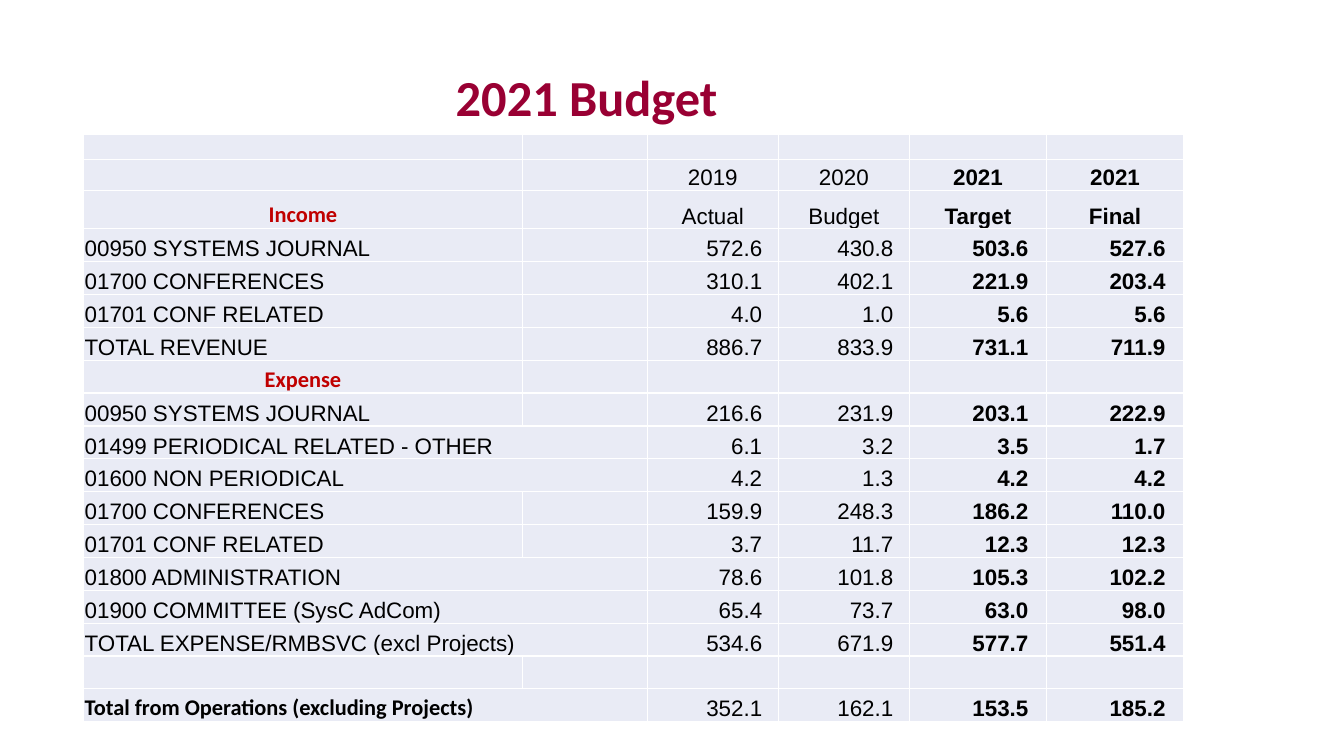
from pptx import Presentation
from pptx.dml.color import RGBColor as RGB
from pptx.enum.text import MSO_ANCHOR as Anchor, PP_ALIGN as Align
from pptx.util import Inches, Pt

MAROON = RGB(0x99, 0x00, 0x33)
RED = RGB(0xC0, 0x00, 0x00)
BLACK = RGB(0x00, 0x00, 0x00)
PALE = RGB(0xE9, 0xEB, 0xF5)

# Budget lines: label, blank column, then one figure per year
ROWS = [
    [""] * 6,
    ["", "", "2019", "2020", "2021", "2021"],
    ["Income", "", "Actual", "Budget", "Target", "Final"],
    ["00950 SYSTEMS JOURNAL", "", "572.6", "430.8", "503.6", "527.6"],
    ["01700 CONFERENCES", "", "310.1", "402.1", "221.9", "203.4"],
    ["01701 CONF RELATED", "", "4.0", "1.0", "5.6", "5.6"],
    ["TOTAL REVENUE", "", "886.7", "833.9", "731.1", "711.9"],
    ["Expense"] + [""] * 5,
    ["00950 SYSTEMS JOURNAL", "", "216.6", "231.9", "203.1", "222.9"],
    ["01499 PERIODICAL RELATED - OTHER", "", "6.1", "3.2", "3.5", "1.7"],
    ["01600 NON PERIODICAL", "", "4.2", "1.3", "4.2", "4.2"],
    ["01700 CONFERENCES", "", "159.9", "248.3", "186.2", "110.0"],
    ["01701 CONF RELATED", "", "3.7", "11.7", "12.3", "12.3"],
    ["01800 ADMINISTRATION", "", "78.6", "101.8", "105.3", "102.2"],
    ["01900 COMMITTEE (SysC AdCom)", "", "65.4", "73.7", "63.0", "98.0"],
    ["TOTAL EXPENSE/RMBSVC (excl Projects)", "", "534.6", "671.9", "577.7", "551.4"],
    [""] * 6,
    ["Total from Operations (excluding Projects)", "", "352.1", "162.1", "153.5", "185.2"],
]
WIDTHS = [4.35, 1.24, 1.3, 1.3, 1.36, 1.36]
HEADS = [0.25, 0.31, 0.38]
WIDE = [9, 10, 13, 14, 15, 17]  # rows whose label spans two columns
LAST = len(ROWS) - 1
STEP = (5.83 - sum(HEADS)) / (len(ROWS) - len(HEADS))

deck = Presentation()
deck.slide_width, deck.slide_height = Inches(13.33), Inches(7.5)
slide = deck.slides.add_slide(deck.slide_layouts[5])

# Title
title = slide.shapes.title
title.left, title.top = Inches(4.42), Inches(0.67)
title.width, title.height = Inches(7.5), Inches(1)
frame = title.text_frame
frame.text = "2021 Budget"
frame.vertical_anchor = Anchor.TOP
para = frame.paragraphs[0]
para.alignment = Align.LEFT
para.line_spacing = 0.9
font = para.font
font.name, font.size, font.bold = "Calibri", Pt(36), True
font.color.rgb = MAROON

# Table grid
table = slide.shapes.add_table(len(ROWS), len(WIDTHS), Inches(0.83), Inches(1.33),
                               Inches(sum(WIDTHS)), Inches(5.83)).table
table.first_row = table.horz_banding = False
for col, width in zip(table.columns, WIDTHS):
    col.width = Inches(width)
for r, row in enumerate(table.rows):
    row.height = Inches(HEADS[r] if r < len(HEADS) else STEP)
for r in WIDE:
    table.cell(r, 0).merge(table.cell(r, 1))

# Cell text and fill
for r, line in enumerate(ROWS):
    for c, text in enumerate(line):
        cell = table.cell(r, c)
        cell.fill.solid()
        cell.fill.fore_color.rgb = PALE
        cell.vertical_anchor = Anchor.BOTTOM
        cell.margin_left = cell.margin_right = cell.margin_top = Inches(0.01)
        cell.margin_bottom = 0
        cell.text = text
        para = cell.text_frame.paragraphs[0]
        head = text in ("Income", "Expense")
        if c > 1 and r > 2:
            para.alignment = Align.RIGHT
            cell.margin_right = Inches(0.16 if c < 4 else 0.18)
        elif c > 1 or head:
            para.alignment = Align.CENTER
        else:
            para.alignment = Align.LEFT
        total = r == LAST and c == 0
        font = para.font
        font.name = "Calibri" if head or total else "Arial"
        font.size = Pt(16 if r else 12)
        font.bold = head or total or c > 3
        font.color.rgb = RED if head else BLACK

deck.save("out.pptx")
